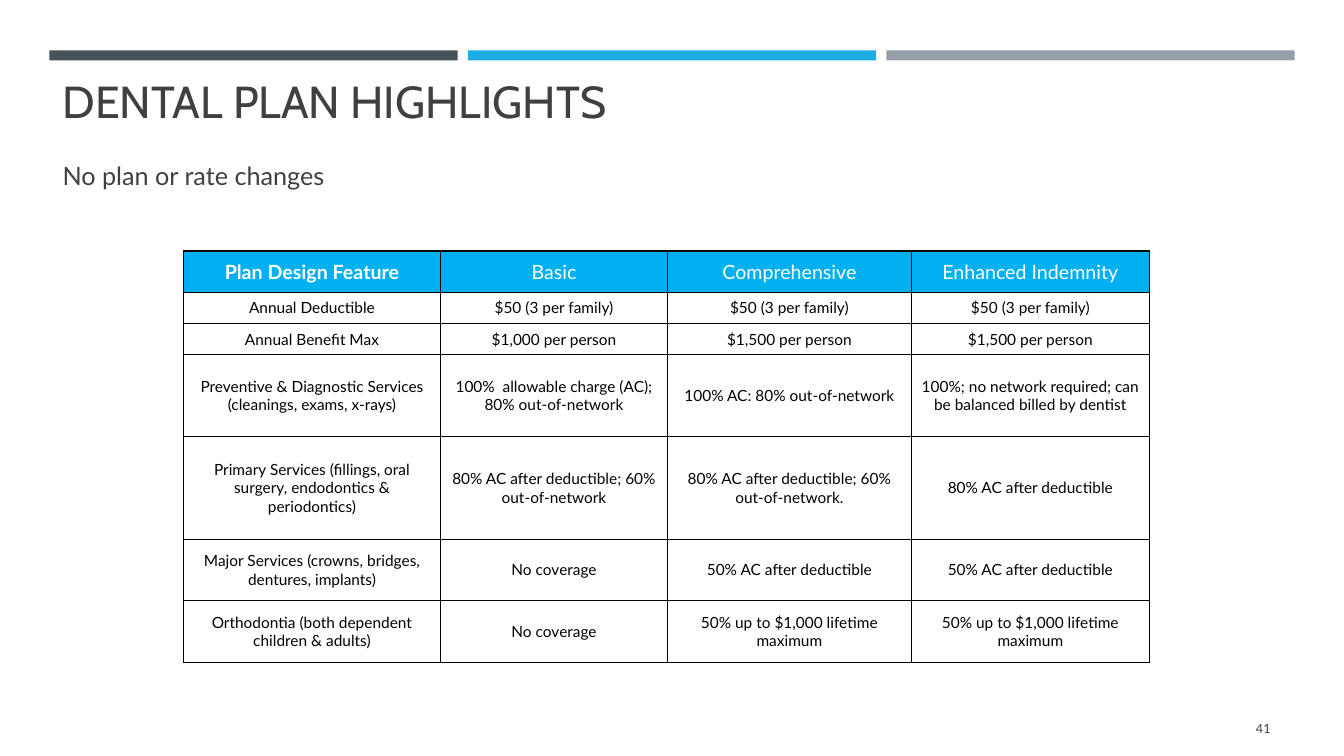
from lxml import etree
from pptx import Presentation
from pptx.dml.color import RGBColor
from pptx.enum.shapes import MSO_SHAPE
from pptx.enum.text import MSO_ANCHOR, MSO_AUTO_SIZE, PP_ALIGN
from pptx.oxml.ns import qn
from pptx.util import Inches, Pt

RECT = MSO_SHAPE.RECTANGLE
MIDDLE = MSO_ANCHOR.MIDDLE
NO_FIT = MSO_AUTO_SIZE.NONE
LEFT, CENTER, RIGHT = PP_ALIGN.LEFT, PP_ALIGN.CENTER, PP_ALIGN.RIGHT

COLORS = {"slate": "465359", "blue": "1CADE4", "gray": "969FA7",
          "header": "00B0F0", "text": "404040", "white": "FFFFFF",
          "black": "000000"}


def add_text(tf, text, size, color, align, font="Lato", bold=False):
    tf.word_wrap = True
    tf.auto_size = NO_FIT
    tf.vertical_anchor = MIDDLE
    p = tf.paragraphs[0]
    p.alignment = align
    r = p.add_run()
    r.text = text
    r.font.name = font
    r.font.size = Pt(size)
    r.font.bold = bold
    r.font.color.rgb = RGBColor.from_string(COLORS[color])
    return p


def add_borders(cell):
    tcPr = cell._tc.get_or_add_tcPr()
    for i, side in enumerate(("a:lnL", "a:lnR", "a:lnT", "a:lnB")):
        ln = etree.Element(qn(side), w=str(Pt(1)))
        fill = etree.SubElement(ln, qn("a:solidFill"))
        etree.SubElement(fill, qn("a:srgbClr"), val=COLORS["black"])
        tcPr.insert(i, ln)


prs = Presentation()
prs.slide_width, prs.slide_height = Inches(13.33), Inches(7.5)
s = prs.slides.add_slide(prs.slide_layouts[1])

# Bars across the top
for i, color in enumerate(("slate", "blue", "gray")):
    bar = s.shapes.add_shape(RECT, Inches(0.49 + 4.15 * i), Inches(0.5),
                             Inches(4.05), Inches(0.1))
    bar.shadow.inherit = False
    bar.fill.solid()
    bar.fill.fore_color.rgb = RGBColor.from_string(COLORS[color])
    bar.line.fill.background()

# Title
title = s.shapes.title
title.left, title.top = Inches(0.52), Inches(0.75)
title.width, title.height = Inches(8.22), Inches(0.5)
add_text(title.text_frame, "DENTAL PLAN HIGHLIGHTS", 32, "text", LEFT, "Cabin")

# Subtitle line, without a bullet
body = s.placeholders[1]
body.left, body.top = Inches(0.52), Inches(1.41)
body.width, body.height = Inches(12.18), Inches(0.64)
p = add_text(body.text_frame, "No plan or rate changes", 18, "text", LEFT)
pPr = p._p.get_or_add_pPr()
pPr.set("marL", "0")
pPr.set("indent", "0")
etree.SubElement(pPr, qn("a:buNone"))
p.line_spacing = 1.1
p.space_before = Pt(0)
p.space_after = Pt(6)

# Plan table
rows = [
    ("Plan Design Feature", "Basic", "Comprehensive", "Enhanced Indemnity"),
    ("Annual Deductible", "$50 (3 per family)", "$50 (3 per family)",
     "$50 (3 per family)"),
    ("Annual Benefit Max", "$1,000 per person", "$1,500 per person",
     "$1,500 per person"),
    ("Preventive & Diagnostic Services (cleanings, exams, x-rays)",
     "100%  allowable charge (AC); 80% out-of-network",
     "100% AC: 80% out-of-network",
     "100%; no network required; can be balanced billed by dentist"),
    ("Primary Services (fillings, oral surgery, endodontics & periodontics)",
     "80% AC after deductible; 60% out-of-network",
     "80% AC after deductible; 60% out-of-network.",
     "80% AC after deductible"),
    ("Major Services (crowns, bridges, dentures, implants)", "No coverage",
     "50% AC after deductible", "50% AC after deductible"),
    ("Orthodontia (both dependent children & adults)", "No coverage",
     "50% up to $1,000 lifetime maximum",
     "50% up to $1,000 lifetime maximum"),
]
col_widths = (2.55, 2.25, 2.42, 2.36)
row_heights = (0.41, 0.31, 0.31, 0.81, 1.02, 0.61, 0.61)
table = s.shapes.add_table(len(rows), len(col_widths), Inches(1.82),
                           Inches(2.49), Inches(9.58), Inches(4.08)).table
table.horz_banding = False
for col, width in zip(table.columns, col_widths):
    col.width = Inches(width)
for i, (row, height) in enumerate(zip(rows, row_heights)):
    table.rows[i].height = Inches(height)
    for j, text in enumerate(row):
        cell = table.cell(i, j)
        cell.margin_left = cell.margin_right = Inches(0.07)
        cell.margin_top = cell.margin_bottom = 0
        cell.vertical_anchor = MIDDLE
        cell.fill.solid()
        cell.fill.fore_color.rgb = RGBColor.from_string(
            COLORS["white" if i else "header"])
        add_borders(cell)
        p = cell.text_frame.paragraphs[0]
        p.alignment = CENTER
        r = p.add_run()
        r.text = text
        r.font.name = "Lato"
        r.font.size = Pt(11 if i else 14)
        r.font.bold = i == 0 and j == 0
        r.font.color.rgb = RGBColor.from_string(
            COLORS["black" if i else "white"])

# Slide number
number = s.shapes.add_textbox(Inches(11.55), Inches(7.03), Inches(1.15),
                              Inches(0.4))
add_text(number.text_frame, "41", 9, "text", RIGHT)

prs.save("out.pptx")
